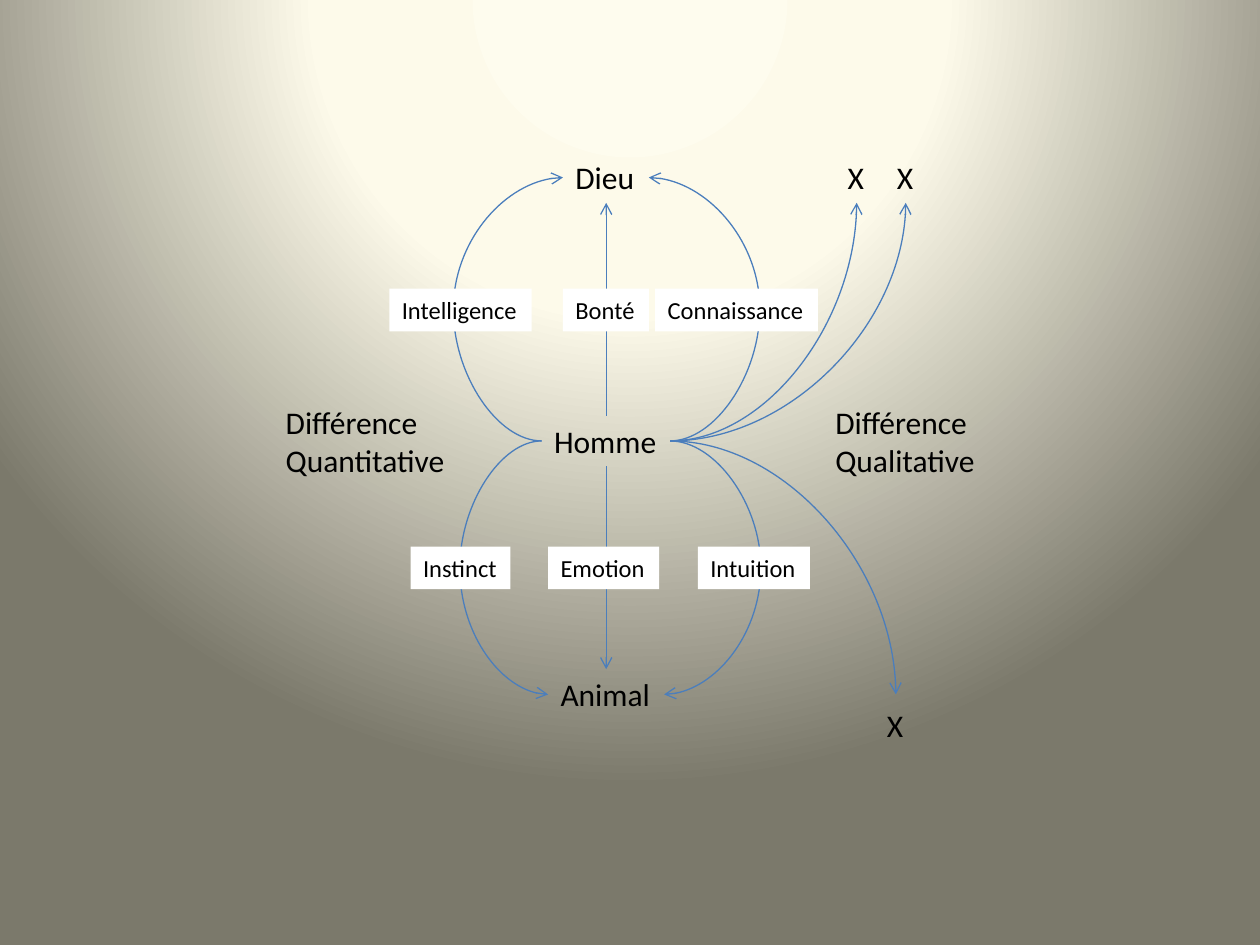
"""Build the slide on man between God and animal, with its looping arrows."""
from pptx import Presentation
from pptx.dml.color import RGBColor
from pptx.enum.shapes import MSO_CONNECTOR as Link
from pptx.enum.text import MSO_AUTO_SIZE as AutoSize, PP_ALIGN as Align
from pptx.oxml import parse_xml
from pptx.oxml.ns import nsdecls
from pptx.util import Cm, Pt
from lxml.etree import SubElement

INK, PAPER, ARROW = "000000", "FFFFFF", "4B7EBC"
FRAME_FORMAT = {"word_wrap": False, "auto_size": AutoSize.SHAPE_TO_FIT_TEXT}
TERM_FORMAT = {"name": "Calibri", "size": Pt(18)}
LABEL_FORMAT = {"name": "Calibri", "size": Pt(14)}


def paint(color, value):
    color.rgb = RGBColor.from_string(value)


def add_words(words, left, top, width, height, font_format):
    box = slide.shapes.add_textbox(Cm(left), Cm(top), Cm(width), Cm(height))
    frame = box.text_frame
    frame.text = words
    for name, value in FRAME_FORMAT.items():
        setattr(frame, name, value)
    for paragraph in frame.paragraphs:
        paragraph.alignment = Align.LEFT
        for name, value in font_format.items():
            setattr(paragraph.font, name, value)
        paint(paragraph.font.color, INK)
    return box


deck = Presentation()
deck.slide_width, deck.slide_height = Cm(25.4), Cm(19.05)
slide = deck.slides.add_slide(deck.slide_layouts[6])

stops = "".join(
    f'<a:gs pos="{share * 1000}"><a:srgbClr val="{tone}"/></a:gs>'
    for share, tone in [(0, "FEFCEE"), (40, "FDFAEA"), (100, "7B796B")]
)
glow = parse_xml(
    f'<p:bg {nsdecls("p", "a")}><p:bgPr><a:gradFill rotWithShape="1"><a:gsLst>{stops}</a:gsLst>'
    '<a:path path="circle"><a:fillToRect l="50000" t="-80000" r="50000" b="180000"/></a:path>'
    "</a:gradFill><a:effectLst/></p:bgPr></p:bg>"
)
slide.element.cSld.insert(0, glow)

axis, god_y, man_y, animal_y = 12.22, 3.58, 8.89, 14.0
man_left, man_right = 10.92, 13.51
term_height, label_height = 1.02, 0.86
half = term_height / 2

# start, end, and the x of the bulge for the loops
arrows = [
    (Link.STRAIGHT, (axis, man_y + half), (axis, animal_y - half), None),
    (Link.STRAIGHT, (axis, man_y - half), (axis, god_y + half), None),
    (Link.CURVE, (man_left, man_y), (11.05, animal_y), 9.27),
    (Link.CURVE, (man_right, man_y), (13.39, animal_y), 15.34),
    (Link.CURVE, (man_left, man_y), (11.35, god_y), 9.14),
    (Link.CURVE, (man_right, man_y), (13.08, god_y), 15.32),
    (Link.CURVE, (man_right, man_y), (17.27, god_y + half), None),
    (Link.CURVE, (man_right, man_y), (18.26, god_y + half), None),
    (Link.CURVE, (man_right, man_y), (18.06, animal_y), None),
]
for kind, (x1, y1), (x2, y2), bulge in arrows:
    arrow = slide.shapes.add_connector(kind, Cm(x1), Cm(y1), Cm(x2), Cm(y2))
    arrow.line.width = Pt(0.75)
    paint(arrow.line.color, ARROW)
    outline = arrow.line._get_or_add_ln()
    outline.append(parse_xml(f'<a:tailEnd {nsdecls("a")} type="arrow"/>'))
    properties = outline.getparent()
    properties.append(parse_xml(f'<a:effectLst {nsdecls("a")}/>'))
    geometry = properties.prstGeom
    if bulge is not None:
        ratio = round((bulge - x1) / (x2 - x1) * 100000)
        guide = SubElement(geometry.get_or_add_avLst(), geometry.tag.replace("prstGeom", "gd"))
        guide.set("name", "adj1")
        guide.set("fmla", f"val {ratio}")
    elif kind == Link.CURVE:
        geometry.set("prst", "curvedConnector2")

terms = [
    ("Dieu", 11.35, god_y, 1.73),
    ("Homme", man_left, man_y, 2.59),
    ("Animal", 11.05, animal_y, 2.34),
    ("X", 16.84, god_y, 0.84),
    ("X", 17.83, god_y, 0.84),
    ("X", 17.63, 14.61, 0.84),
]
for term, left, middle, width in terms:
    add_words(term, left, middle - half, width, term_height, TERM_FORMAT)

for difference, left, width in [("Quantitative", 5.51, 3.76), ("Qualitative", 16.59, 3.35)]:
    add_words(f"Différence\n{difference}", left, 8.0, width, 1.8, TERM_FORMAT)

label_rows = {
    5.82: [("Intelligence", 7.85, 2.87), ("Bonté", 11.35, 1.73), ("Connaissance", 13.21, 3.28)],
    11.02: [("Instinct", 8.28, 2.01), ("Emotion", 11.05, 2.24), ("Intuition", 14.07, 2.26)],
}
for top, labels in label_rows.items():
    for label, left, width in labels:
        plate = add_words(label, left, top, width, label_height, LABEL_FORMAT)
        plate.fill.solid()
        paint(plate.fill.fore_color, PAPER)

deck.save("out.pptx")
